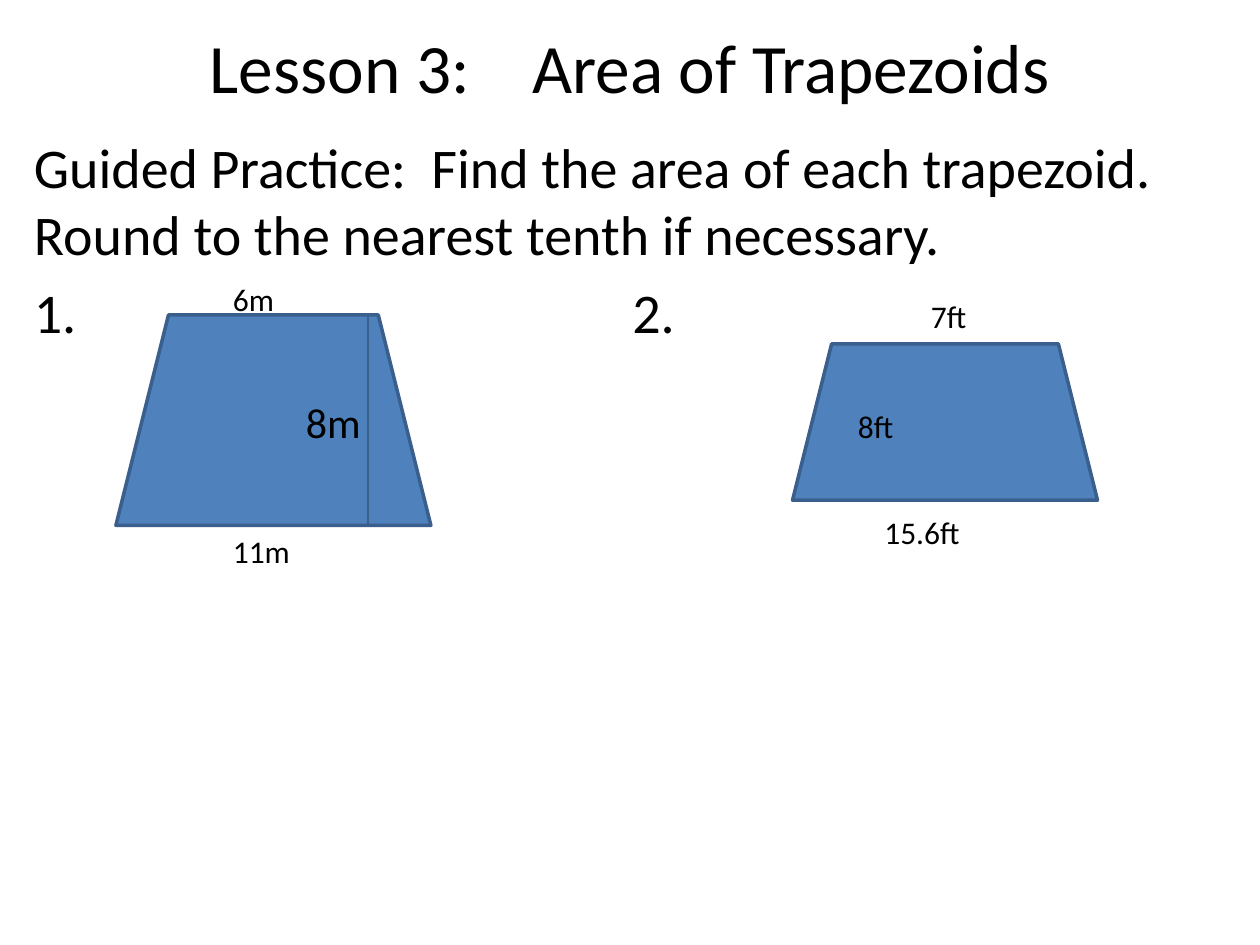
import pptx
import pptx.dml.color
import pptx.enum.shapes
import pptx.enum.text
import pptx.oxml
import pptx.oxml.ns
import pptx.util

Inches = pptx.util.Inches
Pt = pptx.util.Pt
RGBColor = pptx.dml.color.RGBColor

BLACK = RGBColor(0x00, 0x00, 0x00)
BLUE = RGBColor(0x4F, 0x81, 0xBD)
DARK_BLUE = RGBColor(0x3A, 0x5F, 0x8C)
FONT = "Calibri"


def write(para, text, size=18, align=pptx.enum.text.PP_ALIGN.LEFT, before=0):
    para.alignment = align
    para.space_before = Pt(before)
    span = para.add_run()
    span.text = text
    span.font.name = FONT
    span.font.size = Pt(size)
    span.font.color.rgb = BLACK


def place(shape, left, top, width, height):
    shape.left, shape.top = Inches(left), Inches(top)
    shape.width, shape.height = Inches(width), Inches(height)


def add_title(page, text):
    title = page.shapes.title
    place(title, 0.5, 0.17, 9, 0.7)
    title.text_frame.vertical_anchor = pptx.enum.text.MSO_ANCHOR.MIDDLE
    write(title.text_frame.paragraphs[0], text, size=39.6,
          align=pptx.enum.text.PP_ALIGN.CENTER)


def add_box(page, left, top, width, height):
    box = page.shapes.add_textbox(Inches(left), Inches(top), Inches(width), Inches(height))
    box.text_frame.word_wrap = True
    return box.text_frame


def add_label(page, text, left, top, width, height=0.4, size=18):
    write(add_box(page, left, top, width, height).paragraphs[0], text, size=size)


def add_tab_stop(para, position):
    tabs = pptx.oxml.parse_xml(
        f'<a:tabLst {pptx.oxml.ns.nsdecls("a")}>'
        f'<a:tab pos="{Inches(position)}" algn="l"/></a:tabLst>')
    para._p.get_or_add_pPr().append(tabs)


def add_instructions(page):
    frame = add_box(page, 0.17, 1, 9.58, 6.25)
    write(frame.paragraphs[0],
          "Guided Practice:  Find the area of each trapezoid. "
          "Round to the nearest tenth if necessary.", size=32, before=6.4)
    numbers = frame.add_paragraph()
    write(numbers, "1.\t2.", size=32, before=6.4)
    add_tab_stop(numbers, 4.75)


def add_trapezoid(page, left, top, width, height):
    shape = page.shapes.add_shape(
        pptx.enum.shapes.MSO_SHAPE.TRAPEZOID,
        Inches(left), Inches(top), Inches(width), Inches(height))
    shape.shadow.inherit = False
    shape.fill.solid()
    shape.fill.fore_color.rgb = BLUE
    shape.line.color.rgb = DARK_BLUE
    shape.line.width = Pt(2)


def add_height_line(page, left, top, bottom):
    line = page.shapes.add_connector(
        pptx.enum.shapes.MSO_CONNECTOR.STRAIGHT,
        Inches(left), Inches(top), Inches(left), Inches(bottom))
    line.line.color.rgb = DARK_BLUE
    line.line.width = Pt(0.75)
    line._element.spPr.append(
        pptx.oxml.parse_xml(f'<a:effectLst {pptx.oxml.ns.nsdecls("a")}/>'))


def main():
    deck = pptx.Presentation()
    deck.slide_width, deck.slide_height = Inches(10), Inches(7.5)
    page = deck.slides.add_slide(deck.slide_layouts[5])

    add_title(page, "Lesson 3:    Area of Trapezoids")
    add_instructions(page)

    add_trapezoid(page, 0.92, 2.5, 2.5, 1.67)
    add_label(page, "6m", 1.75, 2.17, 1.17)
    add_label(page, "11m", 1.75, 4.17, 0.66)
    add_label(page, "8m", 2.33, 3.1, 0.92, height=0.5, size=24)
    add_height_line(page, 2.92, 2.5, 4.17)

    add_trapezoid(page, 6.29, 2.73, 2.42, 1.24)
    add_label(page, "7ft", 7.29, 2.31, 1.42)
    add_label(page, "8ft", 6.71, 3.18, 0.79)
    add_label(page, "15.6ft", 6.92, 4.02, 1.58)

    deck.save("out.pptx")


if __name__ == "__main__":
    main()
